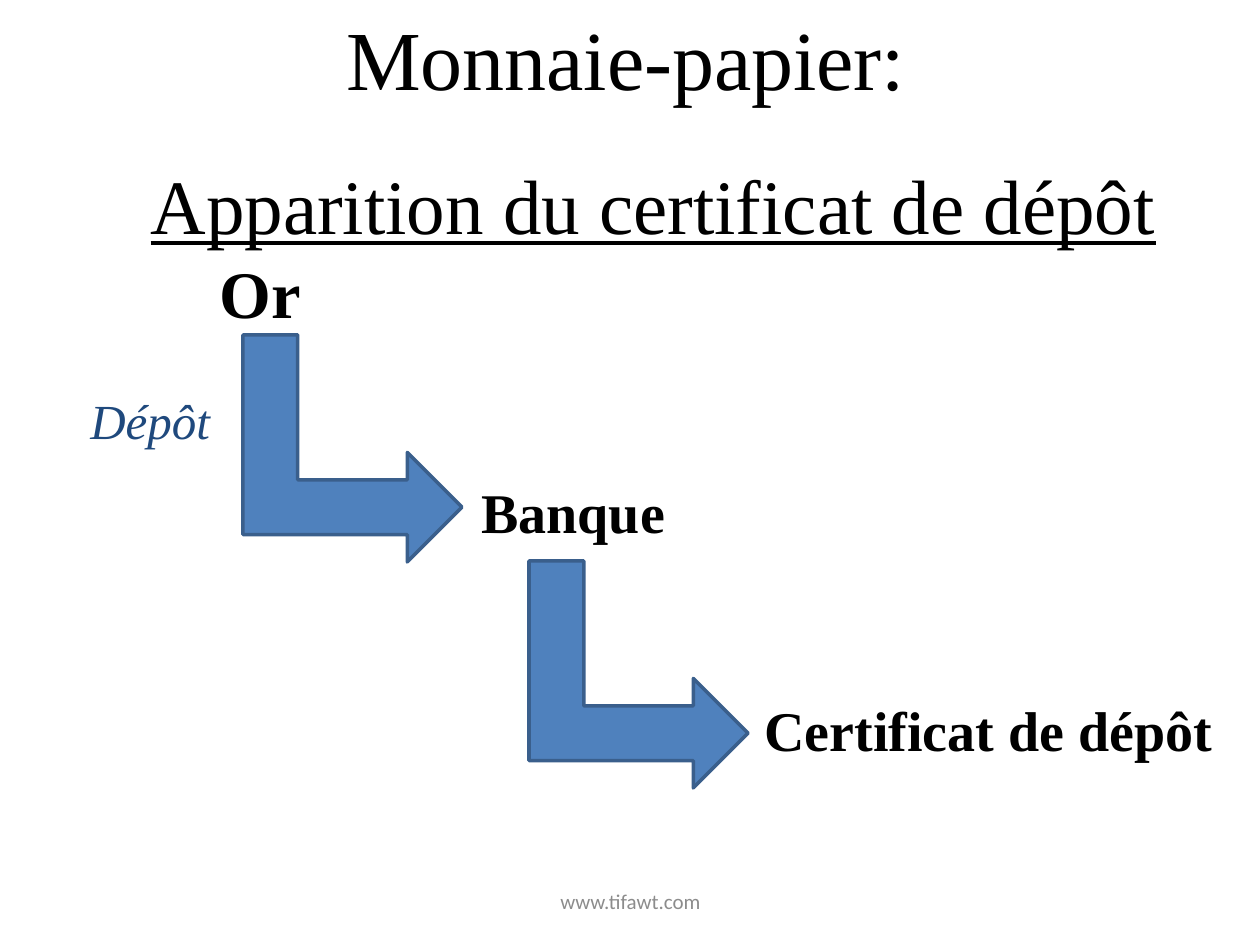
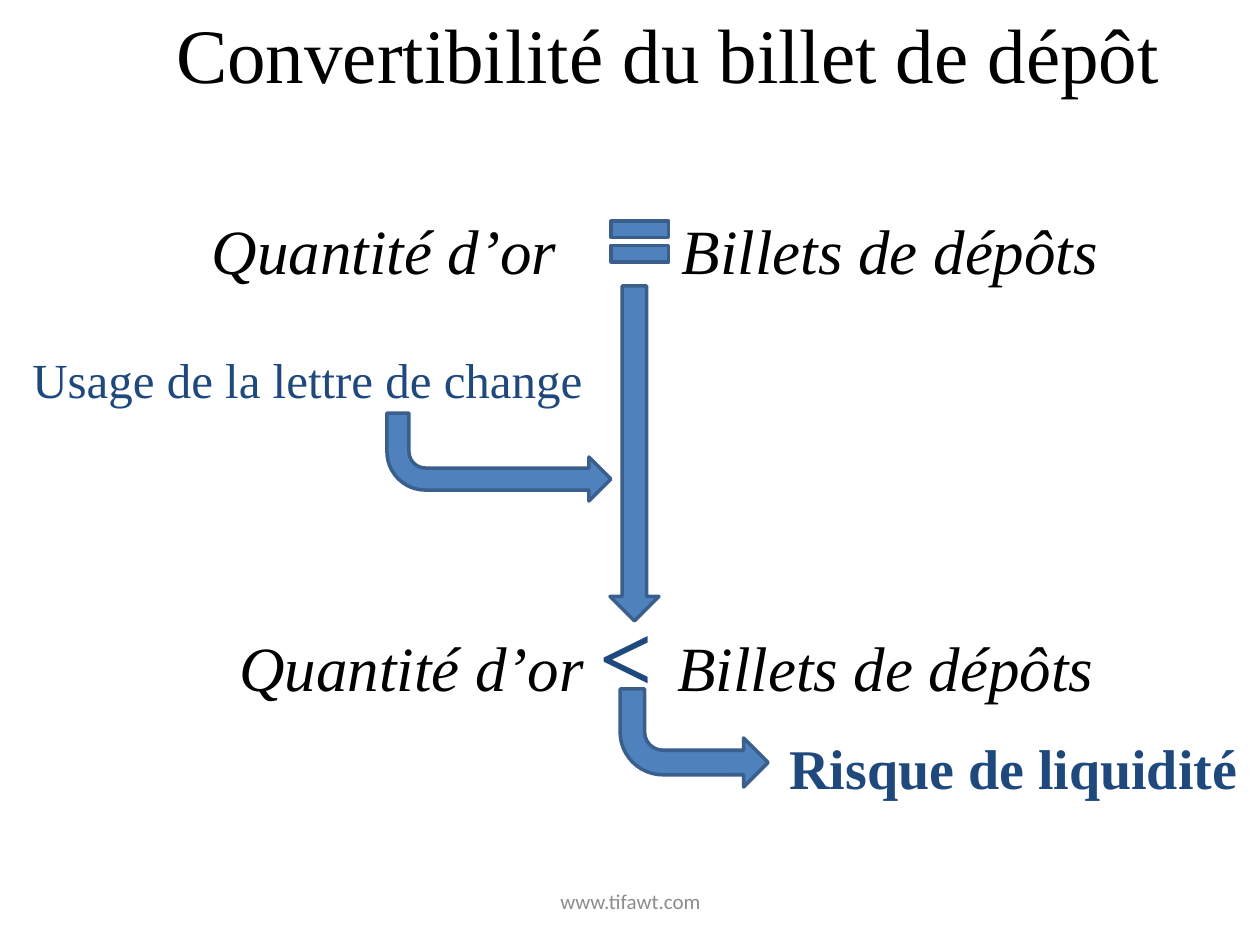
from dataclasses import dataclass
from pptx import Presentation
from pptx.dml.color import RGBColor as RGB
from pptx.enum.shapes import MSO_SHAPE as Shape
from pptx.enum.text import MSO_ANCHOR as Anchor, PP_ALIGN as Align
from pptx.oxml.ns import qn
from pptx.util import Pt
from lxml.etree import SubElement

SCALE = 914400 / 126


@dataclass(frozen=True)
class Theme:
    serif: str = "Times New Roman"
    sans: str = "Calibri"
    ink: str = "000000"
    accent: str = "1F497D"
    fill: str = "4F81BD"
    line: str = "3A5F8C"
    grey: str = "8C8C8C"
    heading: int = 48
    title: int = 44
    start: int = 38
    quantity: int = 36
    compare: int = 54
    step: int = 32
    note: int = 28
    footer: int = 12


T = Theme()


def px(n):
    return round(n * SCALE)


def add_run(p, text, size, color=T.ink, font=T.serif, bold=False, italic=False, underline=False):
    r = p.add_run()
    r.text = text
    f = r.font
    f.name, f.size, f.color.rgb = font, Pt(size), RGB.from_string(color)
    f.bold, f.italic, f.underline = bold, italic, underline


def add_box(s, x, y, w, h, align=Align.LEFT, anchor=Anchor.TOP):
    tf = s.shapes.add_textbox(px(x), px(y), px(w), px(h)).text_frame
    tf.word_wrap = True
    tf.vertical_anchor = anchor
    p = tf.paragraphs[0]
    p.alignment = align
    return tf, p


def add_label(s, text, x, y, w, h, size, **style):
    _, p = add_box(s, x, y, w, h)
    add_run(p, text, size, **style)


def add_title(s, text, x, y, w, h, size=T.title, anchor=Anchor.TOP, **style):
    _, p = add_box(s, x, y, w, h, Align.CENTER, anchor)
    add_run(p, text, size, **style)


def add_footer(s):
    _, p = add_box(s, 431, 876, 399, 50, Align.CENTER, Anchor.MIDDLE)
    add_run(p, "www.tifawt.com", T.footer, T.grey, T.sans)


def add_figure(s, kind, x, y, w, h, rotation=0, flip=False):
    sp = s.shapes.add_shape(kind, px(x), px(y), px(w), px(h))
    sp.shadow.inherit = False
    sp.fill.solid()
    sp.fill.fore_color.rgb = RGB.from_string(T.fill)
    sp.line.color.rgb = RGB.from_string(T.line)
    sp.line.width = Pt(2)
    sp.rotation = rotation
    if flip:
        sp._element.spPr.get_or_add_xfrm().set("flipH", "1")


def add_tab(p, position):
    tabs = SubElement(p._p.get_or_add_pPr(), qn("a:tabLst"))
    SubElement(tabs, qn("a:tab"), pos=str(px(position)), algn="l")


def add_slide(prs):
    s = prs.slides.add_slide(prs.slide_layouts[6])
    add_footer(s)
    return s


def build_certificate(prs):
    s = add_slide(prs)
    add_title(s, "Monnaie-papier:", 59, 0, 1134, 94, T.heading)
    add_title(s, "Apparition du certificat de dépôt", 118, 142, 1071, 124,
              anchor=Anchor.MIDDLE, underline=True)
    add_label(s, "Or", 207, 246, 108, 88, T.start, bold=True)
    add_label(s, "Dépôt", 78, 384, 168, 72, T.note, color=T.accent, italic=True)
    add_label(s, "Banque", 469, 471, 210, 81, T.step, bold=True)
    add_label(s, "Certificat de dépôt", 752, 689, 478, 81, T.step, bold=True)
    for i in range(2):
        add_figure(s, Shape.BENT_UP_ARROW, 239 + 286 * i, 339 + 226 * i, 227, 219, rotation=90)


def build_convertibility(prs):
    s = add_slide(prs)
    add_title(s, "Convertibilité du billet de dépôt", 157, 0, 1023, 106)

    tf, p = add_box(s, 137, 178, 1033, 158)
    tf.margin_left, tf.margin_top = px(75), px(34)
    add_tab(p, 470)
    add_run(p, "Quantité d’or\tBillets de dépôts", T.quantity, italic=True)

    add_figure(s, Shape.DOWN_ARROW, 610, 286, 49, 335)
    add_figure(s, Shape.MATH_EQUAL, 601, 207, 78, 69)
    add_label(s, "Usage de la lettre de change", 20, 343, 590, 72, T.note, color=T.accent)

    _, p = add_box(s, 227, 591, 886, 127)
    add_run(p, "Quantité d’or ", T.quantity, italic=True)
    add_run(p, "< ", T.compare, T.accent, bold=True, italic=True)
    add_run(p, "Billets de dépôts", T.quantity, italic=True)

    for frame in ((387, 413, 224, 88), (620, 689, 148, 98)):
        add_figure(s, Shape.BENT_ARROW, *frame, rotation=180, flip=True)
    add_label(s, "Risque de liquidité", 777, 727, 478, 81, T.step, color=T.accent, bold=True)


def main():
    prs = Presentation()
    prs.slide_width, prs.slide_height = px(1260), px(945)
    build_certificate(prs)
    build_convertibility(prs)
    prs.save("out.pptx")


if __name__ == "__main__":
    main()
